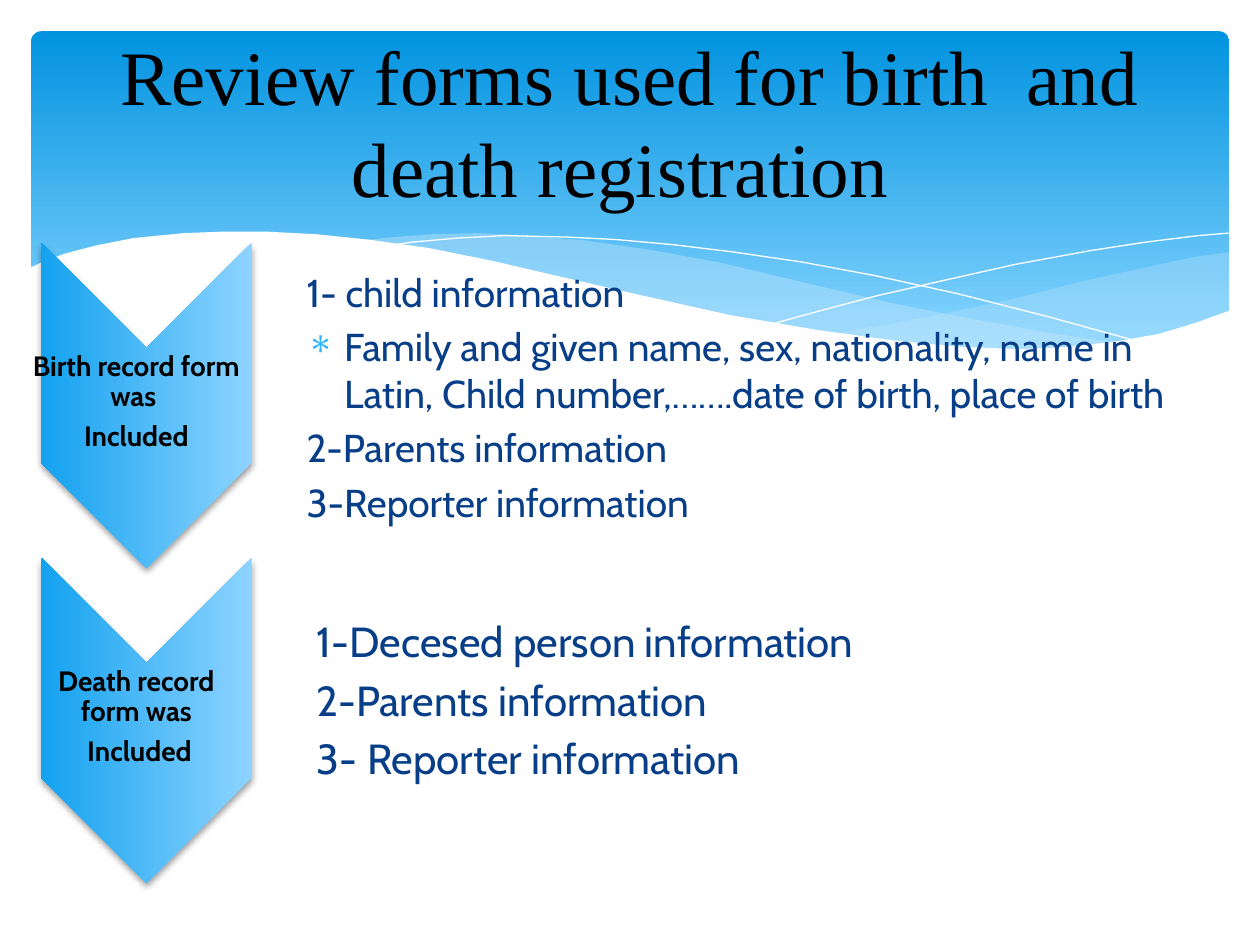
"""Build a slide on the forms used for birth and death registration."""
import lxml.etree
import pptx
import pptx.dml.color
import pptx.enum.shapes
import pptx.enum.text
import pptx.oxml.ns
import pptx.util

Cm = pptx.util.Cm
Pt = pptx.util.Pt
qn = pptx.oxml.ns.qn
color = pptx.dml.color.RGBColor.from_string
SHAPES = pptx.enum.shapes.MSO_SHAPE
CENTER = pptx.enum.text.PP_ALIGN.CENTER
MIDDLE = pptx.enum.text.MSO_ANCHOR.MIDDLE


def add_gradient_shape(kind, left, top, width, height, stops):
    shape = slide.shapes.add_shape(kind, Cm(left), Cm(top), Cm(width), Cm(height))
    shape.shadow.inherit = False
    shape.line.fill.background()
    shape.fill.gradient()
    shape.fill.gradient_angle = 270
    for stop, (position, value) in zip(shape.fill.gradient_stops, stops):
        stop.position = position
        stop.color.rgb = color(value)
    return shape


def add_text(left, top, width, height, text, font, size, value):
    box = slide.shapes.add_textbox(Cm(left), Cm(top), Cm(width), Cm(height))
    box.text_frame.word_wrap = True
    box.text_frame.text = text
    for paragraph in box.text_frame.paragraphs:
        for run in paragraph.runs:
            run.font.name = font
            run.font.size = Pt(size)
            run.font.color.rgb = color(value)
    return box.text_frame


presentation = pptx.Presentation()
presentation.slide_width = Cm(25.4)
presentation.slide_height = Cm(19.05)
slide = presentation.slides.add_slide(presentation.slide_layouts[6])

banner = add_gradient_shape(SHAPES.ROUNDED_RECTANGLE, 0.63, 0.63, 24.15, 6.86,
                            [(0, "0293E0"), (0.9, "83D3FE")])
banner.adjustments[0] = 0.03

right_band = [
    (24.77, 5.08), (24.08, 5.18), (23.01, 5.41), (21.87, 5.66), (20.45, 6.02),
    (19.13, 6.3), (17.93, 6.53), (16.79, 6.73), (17.91, 6.86), (18.92, 6.99),
    (19.84, 7.04), (20.68, 7.06), (21.44, 7.04), (22.15, 6.96), (22.78, 6.86),
    (23.39, 6.73), (23.93, 6.58), (24.46, 6.4), (24.79, 6.27), (24.79, 5.08)]
middle_band = [
    (22.68, 6.93), (21.26, 6.73), (19.69, 6.45), (17.93, 6.1), (15.98, 5.64),
    (14.45, 5.28), (13.06, 5.03), (11.81, 4.85), (10.67, 4.75), (9.65, 4.7),
    (8.74, 4.72), (7.95, 4.78), (7.26, 4.85), (8.69, 5.05), (10.26, 5.36),
    (11.4, 5.64), (13.46, 6.1), (15.27, 6.48), (16.89, 6.76), (18.34, 6.96),
    (19.63, 7.04), (20.78, 7.06), (21.77, 7.04)]
falling_line = [
    (7.85, 4.95), (8.33, 4.88), (9.22, 4.8), (10.19, 4.75), (11.43, 4.78),
    (12.42, 4.83), (13.54, 4.93), (14.78, 5.08), (16.15, 5.28), (17.65, 5.56),
    (19.3, 5.92), (21.11, 6.38), (23.04, 6.91)]
rising_line = [
    (15.57, 6.53), (16.59, 6.25), (17.65, 5.97), (19, 5.66), (20.47, 5.33),
    (22, 5.05), (23.11, 4.88), (24.16, 4.75), (24.77, 4.7)]
white_wave = [
    (24.82, 6.25), (24.13, 6.5), (23.37, 6.73), (22.53, 6.88), (21.59, 6.99),
    (20.55, 7.04), (19.33, 6.99), (17.98, 6.86), (16.46, 6.65), (14.71, 6.35),
    (12.78, 5.92), (11.35, 5.59), (9.93, 5.26), (8.64, 5), (7.42, 4.83),
    (6.35, 4.72), (5.36, 4.67), (4.5, 4.67), (3.71, 4.7), (2.69, 4.8),
    (1.93, 4.95), (1.32, 5.11), (0.91, 5.26), (0.58, 5.41), (0.58, 8.36),
    (24.82, 8.36)]

for points, fill, opacity in [
        (right_band, "C6E7FC", 29), (middle_band, "C6E7FC", 40),
        (falling_line, None, 100), (rising_line, None, 100),
        (white_wave, "FFFFFF", 100)]:
    start, *rest = [(Cm(x), Cm(y)) for x, y in points]
    builder = slide.shapes.build_freeform(*start)
    builder.add_line_segments(rest, close=fill is not None)
    wave = builder.convert_to_shape()
    wave.shadow.inherit = False
    if fill is None:
        wave.fill.background()
        wave.line.color.rgb = color("FFFFFF")
        wave.line.width = Pt(0)
        continue
    wave.line.fill.background()
    wave.fill.solid()
    wave.fill.fore_color.rgb = color(fill)
    if opacity < 100:
        solid = wave.fill._xPr.find(qn("a:solidFill"))
        lxml.etree.SubElement(solid[0], qn("a:alpha"), val=str(opacity * 1000))

title = add_text(0.85, 0.42, 23.7, 4.02,
                 "Review forms used for birth  and death registration ",
                 "Times New Roman", 44, "000000")
title.vertical_anchor = MIDDLE
title.paragraphs[0].alignment = CENTER

for top, text in [(6.05, "Birth record form was \nIncluded"),
                  (12.4, "Death record form was\n Included")]:
    chevron = add_gradient_shape(SHAPES.CHEVRON, -0.33, top, 6.56, 4.24,
                                 [(0, "8CD3FF"), (1, "14A2EF")])
    chevron.rotation = 90
    effects = chevron._element.spPr.find(qn("a:effectLst"))
    shadow = lxml.etree.SubElement(
        effects, qn("a:outerShdw"), blurRad=str(Pt(4)), dist=str(Pt(2)),
        dir="5400000", rotWithShape="0")
    black = lxml.etree.SubElement(shadow, qn("a:srgbClr"), val="000000")
    lxml.etree.SubElement(black, qn("a:alpha"), val="38000")

    label = add_text(0.63, top + 0.1, 4.24, 3.94, text, "Cabin", 16, "000000")
    label.vertical_anchor = MIDDLE
    label.margin_left = label.margin_right = Cm(0.03)
    label.margin_top = label.margin_bottom = Cm(0.03)
    for paragraph in label.paragraphs:
        paragraph.alignment = CENTER
        paragraph.line_spacing = 0.9
        paragraph.space_after = Pt(5.6)
        paragraph.runs[0].font.bold = True

birth_items = [
    "1- child information",
    "Family and given name, sex, nationality, name in Latin, "
    "Child number,…….date of birth, place of birth",
    "2-Parents information",
    "3-Reporter information"]
death_items = [
    "1-Decesed person information",
    "2-Parents information",
    "3- Reporter information"]

for left, top, width, height, items, size in [
        (5.93, 5.29, 18.84, 6.14, birth_items, 22.2),
        (6.14, 12.28, 17.78, 4.66, death_items, 24)]:
    details = add_text(left, top, width, height, "\n".join(items), "Cabin", size, "073E87")
    for paragraph in details.paragraphs:
        paragraph.space_before = Pt(size * 0.2)
        properties = paragraph._p.get_or_add_pPr()
        properties.set("marL", str(Cm(0.76)))
        properties.set("indent", str(Cm(-0.76)))
        if paragraph.text.startswith("Family"):
            bullet_color = lxml.etree.SubElement(properties, qn("a:buClr"))
            lxml.etree.SubElement(bullet_color, qn("a:srgbClr"), val="31B6FD")
            lxml.etree.SubElement(properties, qn("a:buChar"), char="∗")

presentation.save("out.pptx")
